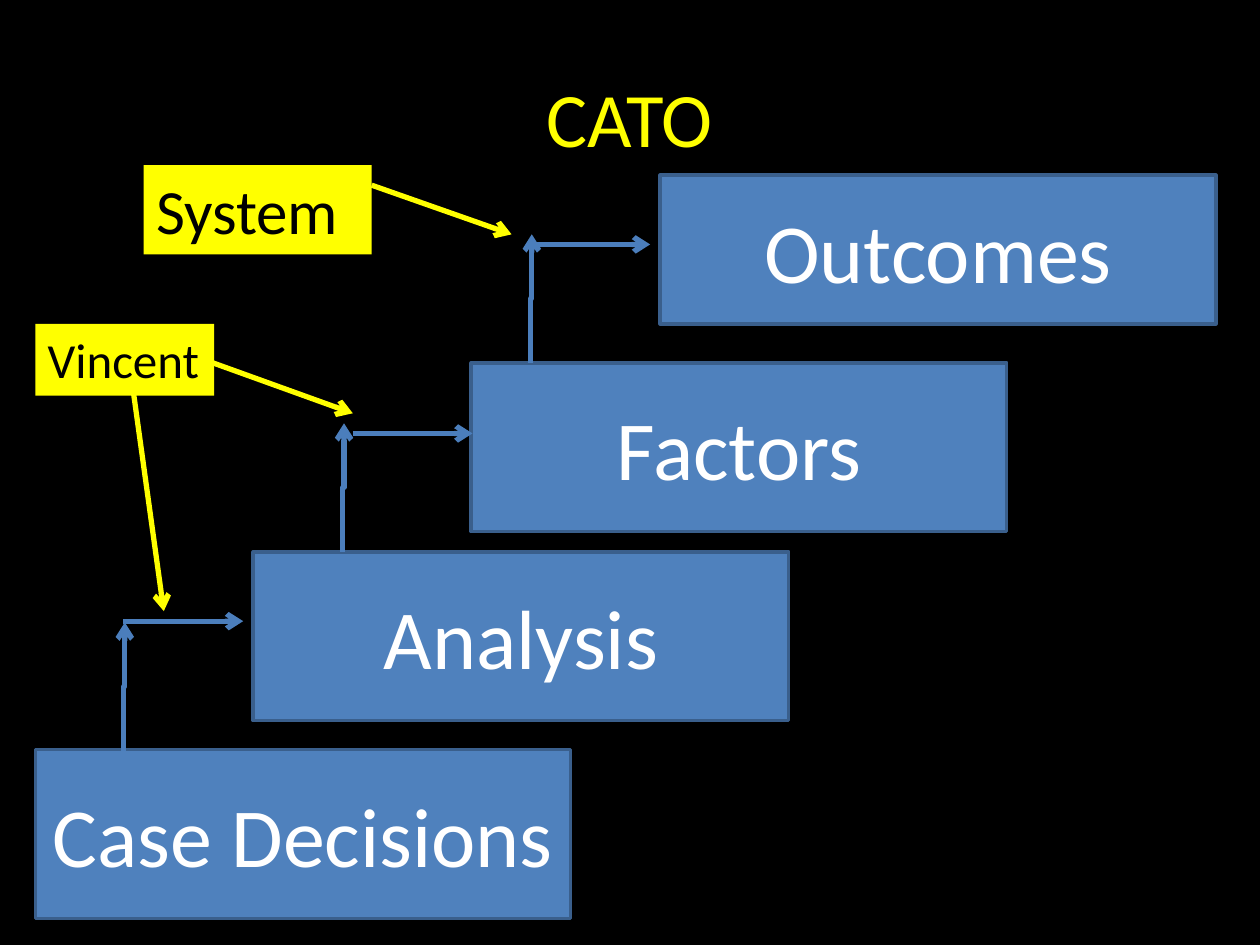
from lxml import etree
from pptx import Presentation
from pptx.dml.color import RGBColor
from pptx.enum.shapes import MSO_CONNECTOR, MSO_SHAPE
from pptx.enum.text import MSO_ANCHOR, MSO_AUTO_SIZE, PP_ALIGN
from pptx.oxml.ns import qn
from pptx.util import Inches, Pt

RECTANGLE = MSO_SHAPE.RECTANGLE
STRAIGHT, ELBOW = MSO_CONNECTOR.STRAIGHT, MSO_CONNECTOR.ELBOW
TOP, MIDDLE = MSO_ANCHOR.TOP, MSO_ANCHOR.MIDDLE
LEFT, CENTER = PP_ALIGN.LEFT, PP_ALIGN.CENTER
GROW = MSO_AUTO_SIZE.SHAPE_TO_FIT_TEXT

BLACK = RGBColor(0x00, 0x00, 0x00)
WHITE = RGBColor(0xFF, 0xFF, 0xFF)
YELLOW = RGBColor(0xFF, 0xFF, 0x00)
BLUE = RGBColor(0x4F, 0x81, 0xBD)
BLUE_BORDER = RGBColor(0x3A, 0x5F, 0x8C)
BLUE_ARROW = RGBColor(0x4B, 0x7E, 0xBC)

RISE, SHIFT, RUN = 1.02, 0.01, 0.95

STAIRS = [
    ("Case Decisions", (0.28, 5.95, 4.25, 1.34)),
    ("Analysis", (2.01, 4.38, 4.25, 1.34)),
    ("Factors", (3.74, 2.88, 4.25, 1.34)),
    ("Outcomes", (5.24, 1.39, 4.41, 1.18)),
]
RISERS = [(0.98, 5.96), (2.72, 4.38), (4.21, 2.88)]
TREADS = [(0.98, 4.93), (2.8, 3.44), (4.21, 1.94)]
LABELS = [
    ("System", (1.14, 1.31, 1.81, 0.71), 36, True),
    ("Vincent", (0.28, 2.57, 1.42, 0.57), 28, False),
]
POINTERS = [
    ((2.95, 1.47), (4.06, 1.86)),
    ((1.69, 2.88), (2.8, 3.28)),
    ((1.06, 3.12), (1.3, 4.85)),
]


def write_text(shape, text, size, color, alignment, anchor):
    frame = shape.text_frame
    frame.word_wrap = True
    frame.vertical_anchor = anchor
    paragraph = frame.paragraphs[0]
    paragraph.alignment = alignment
    run = paragraph.add_run()
    run.text = text
    run.font.name = "Calibri"
    run.font.size = Pt(size)
    run.font.color.rgb = color


def add_rectangle(slide, box, fill):
    shape = slide.shapes.add_shape(RECTANGLE, *map(Inches, box))
    shape.shadow.inherit = False
    shape.fill.solid()
    shape.fill.fore_color.rgb = fill
    shape.line.fill.background()
    return shape


def add_arrow(slide, kind, start, end, color):
    arrow = slide.shapes.add_connector(kind, *map(Inches, (*start, *end)))
    arrow.line.color.rgb = color
    arrow.line.width = Pt(3)
    line = arrow.line._get_or_add_ln()
    etree.SubElement(line, qn("a:tailEnd"), type="arrow")
    etree.SubElement(arrow._element.spPr, qn("a:effectLst"))
    return arrow


def add_riser(slide, x, y):
    center_x, center_y = x + SHIFT / 2, y - RISE / 2
    start = (center_x + RISE / 2, center_y + SHIFT / 2)
    end = (center_x - RISE / 2, center_y - SHIFT / 2)
    riser = add_arrow(slide, ELBOW, start, end, BLUE_ARROW)
    riser._element.spPr.find(qn("a:xfrm")).set("rot", "5400000")


def add_title(slide, box):
    title = slide.shapes.add_textbox(*map(Inches, box))
    write_text(title, "CATO", 44, YELLOW, CENTER, MIDDLE)


def add_stair(slide, text, box):
    stair = add_rectangle(slide, box, BLUE)
    stair.line.color.rgb = BLUE_BORDER
    stair.line.width = Pt(2)
    write_text(stair, text, 48, WHITE, CENTER, MIDDLE)


def add_label(slide, text, box, size, wrap):
    label = add_rectangle(slide, box, YELLOW)
    write_text(label, text, size, BLACK, LEFT, TOP)
    label.text_frame.word_wrap = wrap
    label.text_frame.auto_size = GROW


def main():
    presentation = Presentation()
    presentation.slide_width = Inches(10)
    presentation.slide_height = Inches(7.5)
    slide = presentation.slides.add_slide(presentation.slide_layouts[6])
    slide.background.fill.solid()
    slide.background.fill.fore_color.rgb = BLACK

    add_title(slide, (0.5, 0.3, 9, 1.25))
    for text, box in STAIRS:
        add_stair(slide, text, box)
    for x, y in RISERS:
        add_riser(slide, x, y)
    for x, y in TREADS:
        add_arrow(slide, STRAIGHT, (x, y), (x + RUN, y), BLUE_ARROW)
    for label in LABELS:
        add_label(slide, *label)
    for start, end in POINTERS:
        add_arrow(slide, STRAIGHT, start, end, YELLOW)

    presentation.save("out.pptx")


if __name__ == "__main__":
    main()
